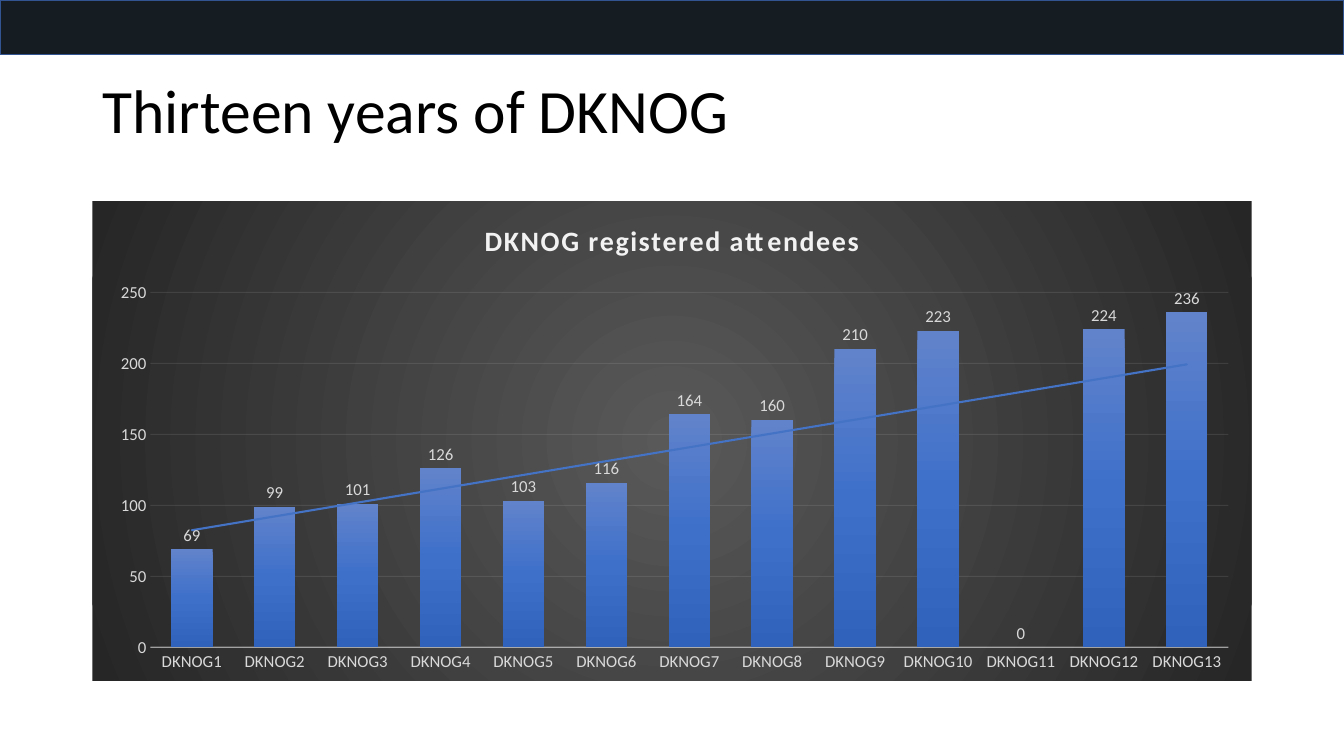
from lxml import etree
from pptx import Presentation
from pptx.chart.data import CategoryChartData
from pptx.dml.color import RGBColor
from pptx.enum.chart import XL_CHART_TYPE, XL_LABEL_POSITION, XL_TICK_MARK
from pptx.enum.shapes import MSO_SHAPE
from pptx.enum.text import MSO_ANCHOR
from pptx.oxml import parse_xml
from pptx.oxml.ns import qn
from pptx.util import Cm, Pt

COLUMNS = XL_CHART_TYPE.COLUMN_CLUSTERED
OUTSIDE_END = XL_LABEL_POSITION.OUTSIDE_END
NO_TICKS = XL_TICK_MARK.NONE
RECTANGLE = MSO_SHAPE.RECTANGLE
MIDDLE = MSO_ANCHOR.MIDDLE

FONT = "Calibri"
TITLE = "Thirteen years of DKNOG"
CHART_TITLE = "DKNOG registered attendees"
ATTENDEES = [69, 99, 101, 126, 103, 116, 164, 160, 210, 223, 0, 224, 236]
LABEL_COLOR = "D9D9D9"
BACKGROUND_STOPS = [(0, "595959"), (100, "262626")]
BAR_STOPS = [(0, "6183CB"), (50, "3E70CA"), (100, "3062BB")]
RADIAL = ('<a:path path="circle"><a:fillToRect l="50000" t="50000" '
          'r="50000" b="50000"/></a:path>')
DOWNWARD = '<a:lin ang="5400000" scaled="0"/>'
PLOT_AREA = {"x": 0.05, "y": 0.19, "w": 0.93, "h": 0.74}

SLIDE_WIDTH, SLIDE_HEIGHT = Cm(33.87), Cm(19.05)
MARGIN = Cm(2.33)
CONTENT_WIDTH = SLIDE_WIDTH - 2 * MARGIN
NAMESPACES = ('xmlns:a="http://schemas.openxmlformats.org/drawingml/2006/main" '
              'xmlns:c="http://schemas.openxmlformats.org/drawingml/2006/chart"')


def rgb(color):
    return RGBColor.from_string(color)


def format_font(font, size, color, bold=False):
    font.name = FONT
    font.size = Pt(size)
    font.bold = bold
    font.color.rgb = rgb(color)


def write_text(text_frame, text, size=12, color="000000", bold=False, line_spacing=None):
    paragraph = text_frame.paragraphs[0]
    paragraph.line_spacing = line_spacing
    run = paragraph.add_run()
    run.text = text
    format_font(run.font, size, color, bold)
    return run


def gradient_properties(stops, direction):
    stop_xml = "".join(
        f'<a:gs pos="{position * 1000}"><a:srgbClr val="{color}"/></a:gs>'
        for position, color in stops)
    return parse_xml(
        f'<c:spPr {NAMESPACES}><a:gradFill rotWithShape="1"><a:gsLst>{stop_xml}</a:gsLst>'
        f'{direction}</a:gradFill><a:ln><a:noFill/></a:ln></c:spPr>')


def format_line(line, color, width, opacity):
    line.color.rgb = rgb(color)
    line.width = Pt(width)
    for color_element in line._get_or_add_ln().iter(qn("a:srgbClr")):
        etree.SubElement(color_element, qn("a:alpha"), val=str(opacity * 1000))


def add_banner(slide):
    banner = slide.shapes.add_shape(RECTANGLE, 0, 0, SLIDE_WIDTH, Cm(1.37))
    banner.shadow.inherit = False
    banner.fill.solid()
    banner.fill.fore_color.rgb = rgb("151D23")
    banner.line.color.rgb = rgb("325491")
    banner.line.width = Pt(1)


def add_title(slide):
    title = slide.shapes.title
    title.left, title.top, title.width, title.height = MARGIN, Cm(1.01), CONTENT_WIDTH, Cm(3.68)
    title.text_frame.vertical_anchor = MIDDLE
    write_text(title.text_frame, TITLE, size=44, line_spacing=0.9)
    title.text_frame.paragraphs[0].alignment = 1


def format_axes(chart):
    for axis in (chart.category_axis, chart.value_axis):
        axis.major_tick_mark = axis.minor_tick_mark = NO_TICKS
        format_font(axis.tick_labels.font, 12, LABEL_COLOR)
    format_line(chart.category_axis.format.line, "F2F2F2", 1, 54)
    value_axis = chart.value_axis
    value_axis.minimum_scale, value_axis.maximum_scale = 0, 250
    value_axis.major_unit = 50
    value_axis.format.line.fill.background()
    format_line(value_axis.major_gridlines.format.line, "F2F2F2", 0.75, 10)


def format_series(plot):
    series = plot.series[0]
    labels = series.data_labels
    labels.show_value = True
    labels.position = OUTSIDE_END
    format_font(labels.font, 12, LABEL_COLOR)
    element = series._element
    bar_properties = element.get_or_add_spPr()
    element.replace(bar_properties, gradient_properties(BAR_STOPS, DOWNWARD))
    element.find(qn("c:cat")).addprevious(parse_xml(
        f'<c:trendline {NAMESPACES}><c:spPr><a:ln w="{Pt(1.5)}" cap="rnd"><a:solidFill>'
        '<a:srgbClr val="4472C4"/></a:solidFill></a:ln></c:spPr>'
        '<c:trendlineType val="linear"/><c:dispRSqr val="0"/><c:dispEq val="0"/></c:trendline>'))


def place_plot_area(chart):
    plot_area = chart._chartSpace.chart.plotArea
    for layout in plot_area.findall(qn("c:layout")):
        plot_area.remove(layout)
    sizes = "".join(f'<c:{key} val="{value}"/>' for key, value in PLOT_AREA.items())
    plot_area.insert(0, parse_xml(
        f'<c:layout {NAMESPACES}><c:manualLayout><c:layoutTarget val="inner"/>'
        f'<c:xMode val="edge"/><c:yMode val="edge"/>{sizes}</c:manualLayout></c:layout>'))


def add_attendee_chart(slide):
    data = CategoryChartData()
    data.categories = [f"DKNOG{number}" for number in range(1, len(ATTENDEES) + 1)]
    data.add_series("Series 1", ATTENDEES)
    chart = slide.shapes.add_chart(COLUMNS, MARGIN, Cm(5.07), CONTENT_WIDTH, Cm(12.09), data).chart
    format_font(chart.font, 10, "000000")
    chart.has_legend = False
    chart.has_title = True
    run = write_text(chart.chart_title.text_frame, CHART_TITLE, size=20, color="F2F2F2", bold=True)
    run.font._element.set("spc", "100")
    chart.chart_title.include_in_layout = False
    plot = chart.plots[0]
    plot.gap_width, plot.overlap = 100, -24
    plot.vary_by_categories = False
    format_axes(chart)
    format_series(plot)
    place_plot_area(chart)
    chart._chartSpace.chart.addnext(gradient_properties(BACKGROUND_STOPS, RADIAL))


def main():
    presentation = Presentation()
    presentation.slide_width, presentation.slide_height = SLIDE_WIDTH, SLIDE_HEIGHT
    slide = presentation.slides.add_slide(presentation.slide_layouts[5])
    add_banner(slide)
    add_title(slide)
    add_attendee_chart(slide)
    presentation.save("out.pptx")


if __name__ == "__main__":
    main()
